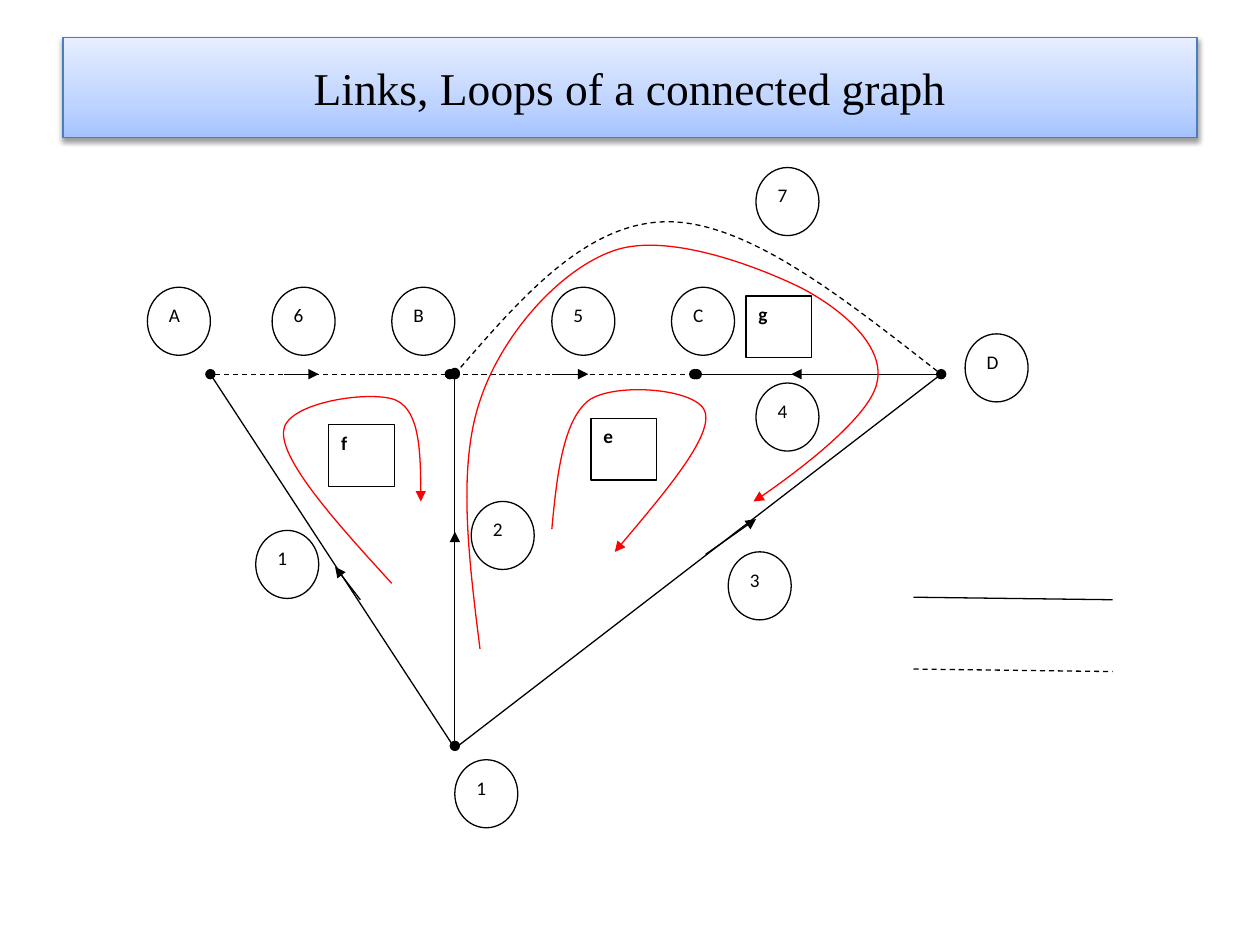
from dataclasses import dataclass

from lxml import etree
from pptx import Presentation
from pptx import util as u
from pptx.dml.color import RGBColor
from pptx.enum import dml, shapes, text
from pptx.oxml import parse_xml
from pptx.oxml.ns import nsdecls, qn


@dataclass(frozen=True)
class Theme:
    """Colours, fonts and sizes of the slide."""

    ink: str = "000000"
    paper: str = "FFFFFF"
    loop: str = "FF0000"
    banner_edge: str = "4B7EBC"
    banner: tuple = ((0, "A4C4FF"), (35, "BFD4FF"), (100, "E6EEFF"))
    title_font: str = "Times New Roman"
    label_font: str = "Calibri"
    title_size: int = 26
    label_size: int = 11
    stroke: float = 0.75


class GraphSlide:
    """Draws the elements of a graph on one slide."""

    def __init__(self, slide, theme):
        self.slide = slide
        self.theme = theme

    def style_line(self, shape, color, dashed=False, head=None, tail=None):
        """Sets colour, width, dash and line ends."""
        shape.line.color.rgb = RGBColor.from_string(color)
        shape.line.width = u.Pt(self.theme.stroke)
        if dashed:
            shape.line.dash_style = dml.MSO_LINE.DASH
        outline = shape.element.spPr.find(qn("a:ln"))
        for tag, end in (("a:headEnd", head), ("a:tailEnd", tail)):
            if end:
                etree.SubElement(outline, qn(tag), type=end)

    def style_text(self, frame, font, size, bold=False):
        """Formats every run of a text frame."""
        for paragraph in frame.paragraphs:
            for run in paragraph.runs:
                run.font.name = font
                run.font.size = u.Pt(size)
                run.font.bold = bold
                run.font.color.rgb = RGBColor.from_string(self.theme.ink)

    def title(self, wording, left, top, width, height):
        """Fills the title placeholder as a shaded banner."""
        banner = self.slide.shapes.title
        banner.left, banner.top = u.Inches(left), u.Inches(top)
        banner.width, banner.height = u.Inches(width), u.Inches(height)
        frame = banner.text_frame
        frame.text = wording
        frame.vertical_anchor = text.MSO_ANCHOR.MIDDLE
        frame.paragraphs[0].alignment = text.PP_ALIGN.CENTER
        self.style_text(frame, self.theme.title_font, self.theme.title_size)
        banner.fill.gradient()
        banner.fill.gradient_angle = 90
        stops = banner.element.spPr.find(qn("a:gradFill")).find(qn("a:gsLst"))
        for stop in list(stops):
            stops.remove(stop)
        for position, color in self.theme.banner:
            stop = etree.SubElement(stops, qn("a:gs"), pos=str(position * 1000))
            etree.SubElement(stop, qn("a:srgbClr"), val=color)
        self.style_line(banner, self.theme.banner_edge)
        banner.element.spPr.append(parse_xml(
            f'<a:effectLst {nsdecls("a")}><a:outerShdw blurRad="{u.Pt(3.1)}" '
            f'dist="{u.Pt(1.6)}" dir="5400000" rotWithShape="0">'
            f'<a:srgbClr val="{self.theme.ink}"><a:alpha val="38000"/></a:srgbClr>'
            '</a:outerShdw></a:effectLst>'))

    def label(self, kind, wording, left, top, width, height, bold=False):
        """Adds an outlined shape with a short label."""
        tag = self.slide.shapes.add_shape(
            kind, u.Inches(left), u.Inches(top), u.Inches(width), u.Inches(height))
        tag.shadow.inherit = False
        tag.fill.solid()
        tag.fill.fore_color.rgb = RGBColor.from_string(self.theme.paper)
        self.style_line(tag, self.theme.ink)
        frame = tag.text_frame
        frame.text = wording
        frame.vertical_anchor = text.MSO_ANCHOR.TOP
        frame.paragraphs[0].alignment = text.PP_ALIGN.LEFT
        frame.paragraphs[0].space_after = u.Pt(10)
        self.style_text(frame, self.theme.label_font, self.theme.label_size, bold)

    def circle(self, wording, left, top):
        """Adds a round label for a node or link."""
        self.label(shapes.MSO_SHAPE.OVAL, wording, left, top, 0.5, 0.54)

    def box(self, wording, left, top):
        """Adds a square label for a loop."""
        self.label(shapes.MSO_SHAPE.RECTANGLE, wording, left, top, 0.52, 0.49, bold=True)

    def link(self, start, end, **style):
        """Adds a straight line between two points."""
        edge = self.slide.shapes.add_connector(
            shapes.MSO_CONNECTOR.STRAIGHT, *map(u.Inches, start + end))
        self.style_line(edge, self.theme.ink, **style)
        etree.SubElement(edge.element.spPr, qn("a:effectLst"))

    def curve(self, points, color, **style):
        """Adds a Bézier outline from a start and triples of control points."""
        start, *controls = [tuple(map(u.Inches, point)) for point in points]
        builder = self.slide.shapes.build_freeform(*start)
        builder.add_line_segments(controls, close=False)
        arc = builder.convert_to_shape()
        arc.shadow.inherit = False
        arc.fill.background()
        self.style_line(arc, color, **style)
        outline = arc.element.xpath(".//a:pathLst/*")[0]
        segments = outline.findall(qn("a:lnTo"))
        for first in range(0, len(segments), 3):
            bezier = etree.SubElement(outline, qn("a:cubicBezTo"))
            for segment in segments[first:first + 3]:
                bezier.append(segment[0])
                outline.remove(segment)


LEVEL = 2.97
A, B, C, D = [(x, LEVEL) for x in (1.67, 3.61, 5.53, 7.47)]
BASE = (3.61, 5.94)
DOTS = {"head": "oval", "tail": "oval"}

LINKS = [
    (A, B, {"dashed": True, **DOTS}),
    (A, BASE, {}),
    ((3.61, 2.96), (3.61, 5.92), DOTS),
    ((3.57, LEVEL), (5.51, LEVEL), {"dashed": True, **DOTS}),
    (C, D, DOTS),
    (BASE, D, {}),
]
DIRECTIONS = [
    ((2.86, 4.76), (2.66, 4.5)),
    ((2.25, LEVEL), (2.53, LEVEL)),
    ((5.6, 4.4), (6, 4.12)),
    ((3.61, 4.54), (3.61, 4.22)),
    ((4.38, LEVEL), (4.67, LEVEL)),
    ((6.57, LEVEL), (6.28, LEVEL)),
]
TOP_ROW = {"A": 1.17, "6": 2.16, "B": 3.11, "5": 4.38, "C": 5.33}
CIRCLES = [(name, left, 2.28) for name, left in TOP_ROW.items()] + [
    ("7", 6, 1.33), ("4", 6, 3.04), ("D", 7.66, 2.65), ("3", 5.78, 4.38),
    ("2", 3.74, 3.98), ("1", 2.03, 4.21), ("1", 3.61, 6.03),
]
BOXES = [("e", 4.69, 3.32), ("f", 2.61, 3.37), ("g", 5.92, 2.35)]
LINK_7 = [B, (4.13, 2.37), (4.65, 1.76), (5.3, 1.76), (5.94, 1.76), (6.7, 2.37), D]
LOOPS = [
    [(3.11, 4.63), (2.67, 4.15), (2.24, 3.67), (2.25, 3.43), (2.25, 3.19),
     (2.97, 3.09), (3.15, 3.18), (3.33, 3.27), (3.34, 3.63), (3.34, 3.98)],
    [(3.81, 5.15), (3.72, 4.43), (3.63, 3.71), (3.81, 3.18), (3.98, 2.66),
     (4.44, 2.14), (4.87, 1.99), (5.29, 1.84), (6, 2.11), (6.35, 2.28),
     (6.7, 2.46), (7.03, 2.76), (6.96, 3.04), (6.9, 3.33), (6.06, 3.94), (5.98, 3.98)],
    [(4.38, 4.2), (4.42, 3.77), (4.47, 3.34), (4.67, 3.18), (4.87, 3.03),
     (5.56, 3.08), (5.6, 3.28), (5.64, 3.48), (5.26, 3.93), (4.88, 4.38)],
]


def main():
    """Builds and saves the slide."""
    deck = Presentation()
    deck.slide_width, deck.slide_height = u.Inches(10), u.Inches(7.5)
    theme = Theme()
    graph = GraphSlide(deck.slides.add_slide(deck.slide_layouts[5]), theme)
    graph.title("Links, Loops of a connected graph", 0.5, 0.3, 9, 0.79)
    for start, end, style in LINKS:
        graph.link(start, end, **style)
    for start, end in DIRECTIONS:
        graph.link(start, end, tail="triangle")
    for top, dashed in ((4.74, False), (5.31, True)):
        graph.link((7.25, top), (8.83, top + 0.02), dashed=dashed)
    for circle in CIRCLES:
        graph.circle(*circle)
    graph.curve(LINK_7, theme.ink, dashed=True)
    for loop in LOOPS:
        graph.curve(loop, theme.loop, tail="triangle")
    for box in BOXES:
        graph.box(*box)
    deck.save("out.pptx")


if __name__ == "__main__":
    main()
